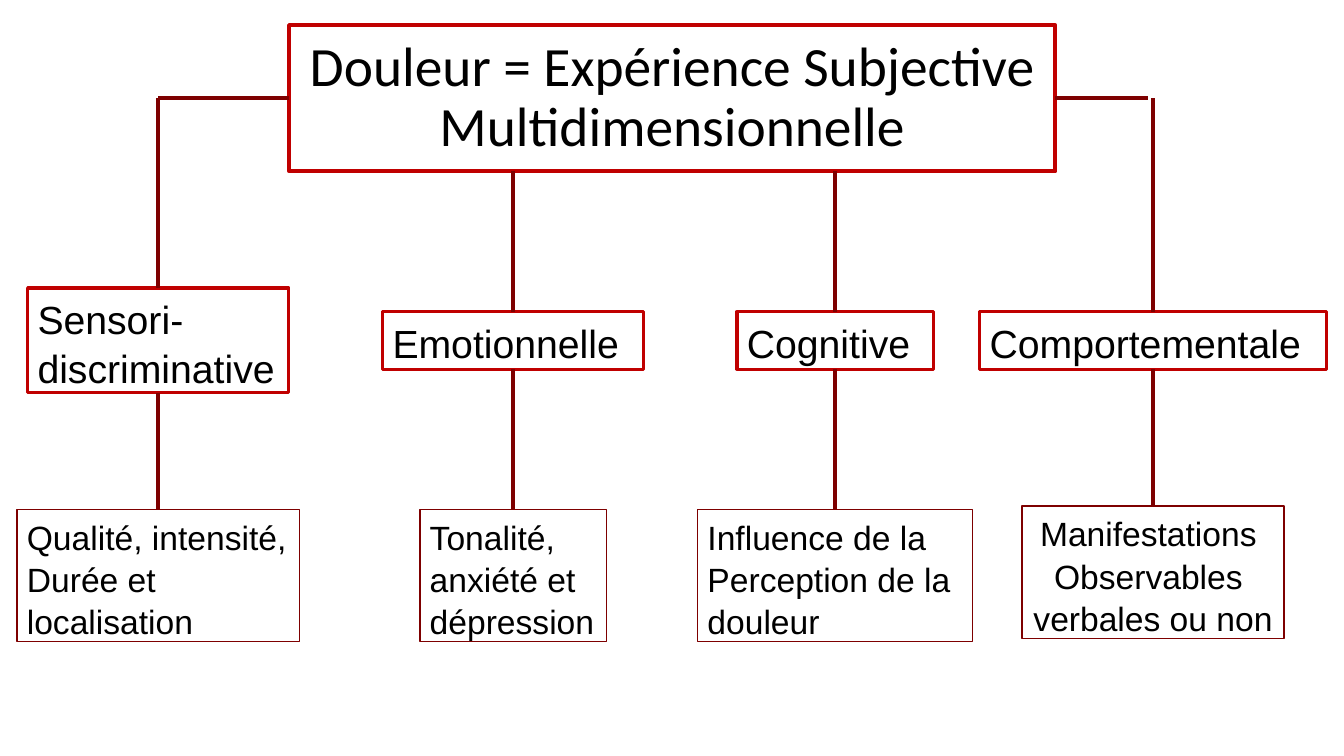
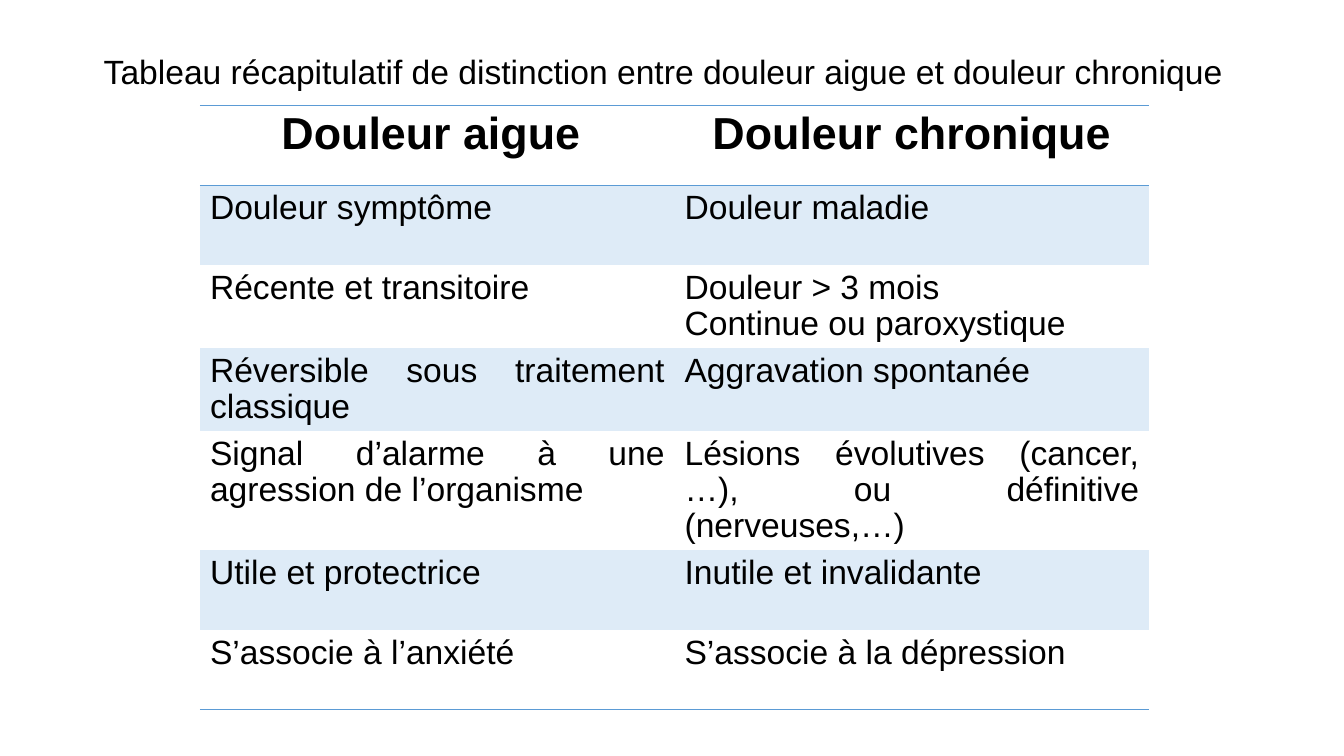
from lxml.etree import SubElement
from pptx import Presentation
from pptx.dml.color import RGBColor
from pptx.enum.shapes import MSO_CONNECTOR, MSO_SHAPE
from pptx.enum.text import MSO_ANCHOR, PP_ALIGN
from pptx.oxml import parse_xml
from pptx.oxml.ns import nsdecls, qn
from pptx.util import Pt

BLACK, RED, MAROON = "000000", "C00000", "7E0000"
BLUE, PALE_BLUE = "5B9BD5", "DEEBF7"
PLAIN_TABLE = "{2D5ABB26-0587-4C30-8999-92F81FD0307C}"


def colour(value):
    return RGBColor.from_string(value)


def write_text(frame, text, size=24, font="Arial", bold=False, spacing=1.05,
               align=PP_ALIGN.LEFT, anchor=MSO_ANCHOR.TOP):
    frame.word_wrap = True
    frame.vertical_anchor = anchor
    for index, line in enumerate(text.split("\n")):
        paragraph = frame.add_paragraph() if index else frame.paragraphs[0]
        paragraph.alignment = align
        paragraph.line_spacing = spacing
        run = paragraph.add_run()
        run.text = line
        run.font.size = Pt(size)
        run.font.name = font
        run.font.bold = bold
        run.font.color.rgb = colour(BLACK)


prs = Presentation()
prs.slide_width, prs.slide_height = Pt(960), Pt(540)
blank = prs.slide_layouts[6]

diagram = prs.slides.add_slide(blank)
title_left, title_top, title_width, title_height = 206.6, 18, 547.2, 104.4
title_right = title_left + title_width
title_bottom = title_top + title_height
title_middle = title_top + title_height / 2
dimension_middle = 243.2

title = diagram.shapes.add_shape(MSO_SHAPE.RECTANGLE, Pt(title_left), Pt(title_top),
                                 Pt(title_width), Pt(title_height))
write_text(title.text_frame, "Douleur = Expérience Subjective Multidimensionnelle",
           size=39.6, font="Calibri", spacing=0.9,
           align=PP_ALIGN.CENTER, anchor=MSO_ANCHOR.MIDDLE)
outlined = [(title, RED, 3)]

branches = [
    (113, "Sensori-\ndiscriminative", 186.6, 75, title_middle,
     "Qualité, intensité,\nDurée et\nlocalisation", 201.8, 364, PP_ALIGN.LEFT),
    (366.6, "Emotionnelle", 186.6, 41, title_bottom,
     "Tonalité,\nanxiété et\ndépression", 133.4, 364, PP_ALIGN.LEFT),
    (596.6, "Cognitive", 140.4, 41, title_bottom,
     "Influence de la\nPerception de la\ndouleur", 196.6, 364, PP_ALIGN.LEFT),
    (823.6, "Comportementale", 247.6, 41, title_middle,
     "Manifestations \nObservables \nverbales ou non", 187.2, 361.6, PP_ALIGN.CENTER),
]
links = [
    (title_left, title_middle, branches[0][0], title_middle, (title, 1), None),
    (title_right, title_middle, 820, title_middle, (title, 3), None),
]
for (axis, dimension, width, height, start, detail,
     detail_width, detail_top, detail_align) in branches:
    top = dimension_middle - height / 2
    dimension_box = diagram.shapes.add_shape(
        MSO_SHAPE.RECTANGLE, Pt(axis - width / 2), Pt(top), Pt(width), Pt(height))
    write_text(dimension_box.text_frame, dimension, size=28)
    detail_box = diagram.shapes.add_shape(
        MSO_SHAPE.RECTANGLE, Pt(axis - detail_width / 2), Pt(detail_top),
        Pt(detail_width), Pt(94.4))
    write_text(detail_box.text_frame, detail, align=detail_align)
    outlined += [(dimension_box, RED, 2.25), (detail_box, MAROON, 1)]
    links += [
        (axis, start, axis, top, None, (dimension_box, 0)),
        (axis, top + height, axis, detail_top, (dimension_box, 2), (detail_box, 0)),
    ]

for box, line_colour, line_width in outlined:
    box.shadow.inherit = False
    box.fill.background()
    box.line.color.rgb = colour(line_colour)
    box.line.width = Pt(line_width)

for x1, y1, x2, y2, begin, end in links:
    link = diagram.shapes.add_connector(
        MSO_CONNECTOR.STRAIGHT, Pt(x1), Pt(y1), Pt(x2), Pt(y2))
    if begin:
        link.begin_connect(*begin)
    if end:
        link.end_connect(*end)
    link.line.color.rgb = colour(MAROON)
    link.line.width = Pt(3)
    SubElement(link._element.spPr, qn("a:effectLst"))

summary = prs.slides.add_slide(blank)
comparison = [
    ("Douleur aigue ", "Douleur chronique"),
    ("Douleur symptôme", "Douleur maladie"),
    ("Récente et transitoire ", "Douleur > 3 mois\nContinue ou paroxystique"),
    ("Réversible sous traitement classique", "Aggravation spontanée"),
    ("Signal d’alarme à une agression de l’organisme",
     "Lésions évolutives (cancer, …), ou définitive (nerveuses,…)"),
    ("Utile et protectrice", "Inutile et invalidante"),
    ("S’associe à l’anxiété", "S’associe à la dépression"),
]
last_row = len(comparison) - 1
table = summary.shapes.add_table(len(comparison), 2, Pt(142.8), Pt(75.6),
                                 Pt(678), Pt(57 * len(comparison))).table
table._tbl.tblPr.find(qn("a:tableStyleId")).text = PLAIN_TABLE

for row, texts in enumerate(comparison):
    header = row == 0
    sides = {0: ["lnT", "lnB"], last_row: ["lnB"]}.get(row, [])
    for column, text in enumerate(texts):
        cell = table.cell(row, column)
        write_text(cell.text_frame, text, size=32 if header else 24, bold=header,
                   spacing=0.97, align=PP_ALIGN.CENTER if header else PP_ALIGN.JUSTIFY)
        for side in sides:
            cell._tc.get_or_add_tcPr().append(parse_xml(
                f'<a:{side} {nsdecls("a")} w="12700"><a:solidFill>'
                f'<a:srgbClr val="{BLUE}"/></a:solidFill></a:{side}>'))
        if row % 2:
            cell.fill.solid()
            cell.fill.fore_color.rgb = colour(PALE_BLUE)
        else:
            cell.fill.background()

heading = summary.shapes.add_textbox(Pt(67), Pt(0), Pt(828), Pt(104.4))
write_text(heading.text_frame,
           "Tableau récapitulatif de distinction entre douleur aigue et douleur chronique",
           spacing=0.9, anchor=MSO_ANCHOR.MIDDLE)

prs.save("out.pptx")
